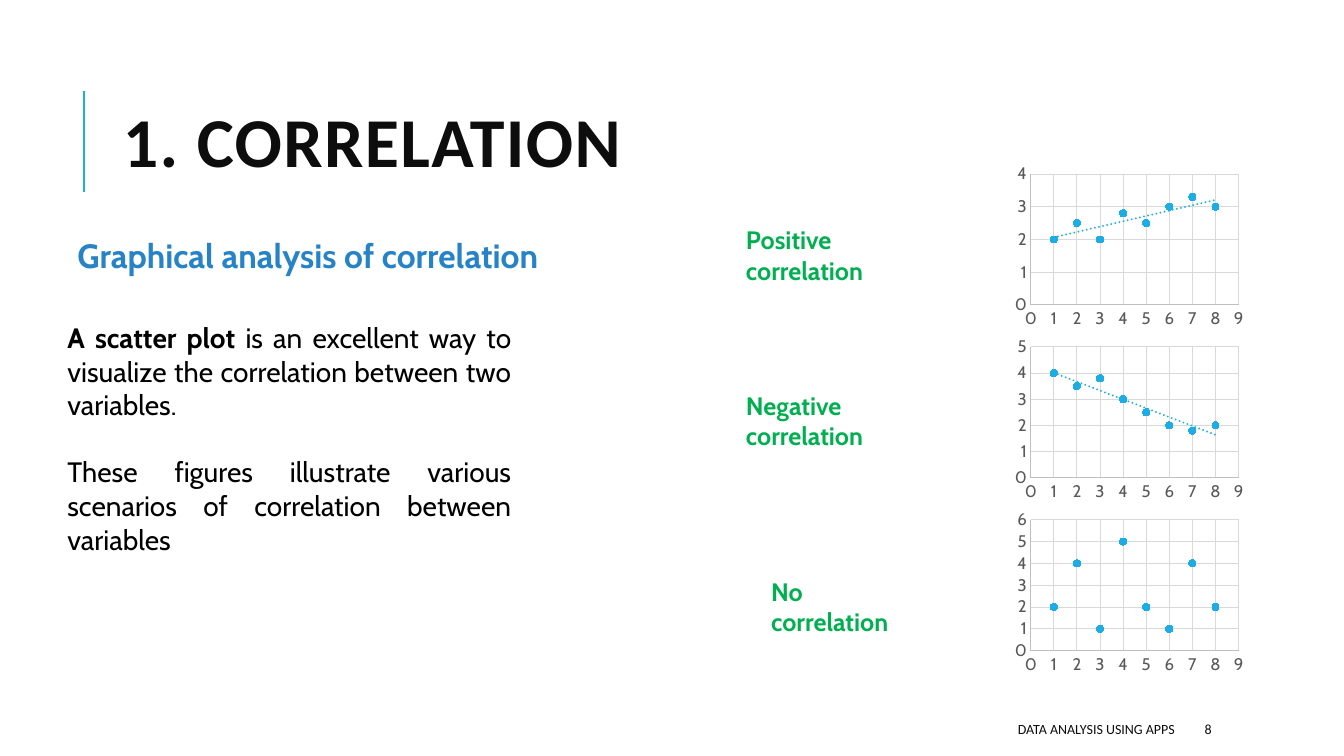
from lxml.etree import SubElement
from pptx import Presentation
from pptx.chart.data import XyChartData
from pptx.dml.color import RGBColor
from pptx.enum.chart import XL_CHART_TYPE as ChartType, XL_MARKER_STYLE as Marker, XL_TICK_MARK as Tick
from pptx.enum.shapes import MSO_CONNECTOR as ConnectorType
from pptx.enum.text import MSO_ANCHOR as Anchor, PP_ALIGN as Align
from pptx.oxml import parse_xml
from pptx.oxml.ns import nsdecls, qn
from pptx.util import Inches, Pt

COLORS = {
    "ink": "0D0D0D",
    "body": "000000",
    "accent": "1CADE4",
    "heading": "2683C6",
    "label": "00B050",
    "tick": "595959",
    "axis": "BFBFBF",
    "grid": "D9D9D9",
}

SCENARIOS = [
    ("Positive correlation", (7.3, 2.18), [2, 2.5, 2, 2.8, 2.5, 3, 3.3, 3], 4, True),
    ("Negative correlation", (7.3, 3.82), [4, 3.5, 3.8, 3, 2.5, 2, 1.8, 2], 5, True),
    ("No correlation", (7.55, 5.67), [2, 4, 1, 5, 2, 1, 4, 2], 6, False),
]
CHART_LEFT, CHART_TOP, CHART_PITCH = 10.01, 1.59, 1.715
CHART_WIDTH, CHART_HEIGHT = 2.37, 1.71


def color(name):
    """Return the palette colour with the given name."""
    return RGBColor.from_string(COLORS[name])


def add_text(slide, box, paragraphs, size, ink, font="Cabin", align=Align.LEFT,
             anchor=Anchor.TOP, wrap=True, gap=0):
    """Add a text box whose paragraphs are lists of (text, bold) runs."""
    frame = slide.shapes.add_textbox(*map(Inches, box)).text_frame
    frame.word_wrap = wrap
    frame.vertical_anchor = anchor
    for index, runs in enumerate(paragraphs):
        paragraph = frame.add_paragraph() if index else frame.paragraphs[0]
        paragraph.alignment = align
        if index:
            paragraph.space_before = Pt(gap)
        for text, bold in runs:
            run = paragraph.add_run()
            run.text = text
            run.font.name = font
            run.font.size = Pt(size)
            run.font.bold = bold
            run.font.color.rgb = color(ink)
    return frame


def add_title(slide, box):
    """Add the title and the vertical rule on its left."""
    left, top, width, height = box
    frame = add_text(slide, box, [[("1. CORRELATION", True)]], 50, "ink",
                     font="Calibri", anchor=Anchor.MIDDLE)
    paragraph = frame.paragraphs[0]
    paragraph.line_spacing = 0.8
    paragraph.runs[0].font._element.set("spc", "100")
    rule_left = Inches(left - 0.29)
    rule = slide.shapes.add_connector(ConnectorType.STRAIGHT, rule_left, Inches(top + 1.26),
                                      rule_left, Inches(top + 0.26))
    rule.line.color.rgb = color("accent")
    rule.line.width = Pt(1.5)
    SubElement(rule.element.spPr, qn("a:effectLst"))


def add_explanation(slide, box):
    """Add the heading and the justified text below it."""
    left, top, width, height = box
    add_text(slide, (left + 0.1, top, 4.91, 0.5),
             [[("Graphical analysis of correlation", True)]], 24, "heading", wrap=False)
    add_text(slide, (left, top + 0.85, width, height - 0.85), [
        [("A scatter plot ", True),
         ("is an excellent way to visualize the correlation between two variables. ", False)],
        [("These figures illustrate various scenarios of correlation between variables", False)],
    ], 20, "body", align=Align.JUSTIFY, gap=24)


def style_axis(axis, maximum):
    """Scale an axis from zero in steps of one and style its lines and labels."""
    axis.minimum_scale, axis.maximum_scale, axis.major_unit = 0, maximum, 1
    axis.major_tick_mark = axis.minor_tick_mark = Tick.NONE
    axis.has_major_gridlines = True
    for line, name in ((axis.format.line, "axis"), (axis.major_gridlines.format.line, "grid")):
        line.color.rgb = color(name)
        line.width = Pt(0.75)
    font = axis.tick_labels.font
    font.name, font.size = "Cabin", Pt(12)
    font.color.rgb = color("tick")


def add_trend(chart):
    """Add a dotted linear trend line to the series of a chart."""
    trend = parse_xml(
        f'<c:trendline {nsdecls("c", "a")}><c:spPr><a:ln w="19050" cap="rnd"><a:solidFill>'
        f'<a:srgbClr val="{COLORS["accent"]}"/></a:solidFill><a:prstDash val="sysDot"/></a:ln>'
        '</c:spPr><c:trendlineType val="linear"/><c:dispRSqr val="0"/><c:dispEq val="0"/>'
        '</c:trendline>')
    next(chart.element.iter(qn("c:xVal"))).addprevious(trend)


def fix_plot_area(chart):
    """Place the inner plot area at a fixed part of the chart."""
    plot_area = next(chart.element.iter(qn("c:plotArea")))
    for layout in plot_area.findall(qn("c:layout")):
        plot_area.remove(layout)
    places = "".join(f'<c:{key} val="{value}"/>' for key, value in
                     (("x", 0.09), ("y", 0.08), ("w", 0.87), ("h", 0.76)))
    plot_area.insert(0, parse_xml(
        f'<c:layout {nsdecls("c")}><c:manualLayout><c:layoutTarget val="inner"/>'
        f'<c:xMode val="edge"/><c:yMode val="edge"/>{places}</c:manualLayout></c:layout>'))


def add_scatter(slide, box, values, maximum, has_trend):
    """Add a scatter chart of the values against 1, 2, 3 and so on."""
    data = XyChartData()
    points = data.add_series("Series 1")
    for x, y in enumerate(values, 1):
        points.add_data_point(x, y)
    chart = slide.shapes.add_chart(ChartType.XY_SCATTER, *map(Inches, box), data).chart
    chart.has_title = chart.has_legend = False
    chart.font.name, chart.font.size = "Cabin", Pt(10)
    chart.font.color.rgb = color("body")
    chart.plots[0].vary_by_categories = False
    style_axis(chart.category_axis, 9)
    style_axis(chart.value_axis, maximum)
    series = chart.plots[0].series[0]
    series.format.line.fill.background()
    series.marker.style, series.marker.size = Marker.CIRCLE, 5
    series.marker.format.fill.solid()
    series.marker.format.fill.fore_color.rgb = color("accent")
    series.marker.format.line.color.rgb = color("accent")
    if has_trend:
        add_trend(chart)
    fix_plot_area(chart)


def add_scenarios(slide):
    """Add the column of scatter charts with their labels."""
    for row, (label, (left, top), values, maximum, has_trend) in enumerate(SCENARIOS):
        box = (CHART_LEFT, CHART_TOP + row * CHART_PITCH, CHART_WIDTH, CHART_HEIGHT)
        add_scatter(slide, box, values, maximum, has_trend)
        add_text(slide, (left, top, 1.45, 0.7), [[(label, True)]], 18, "label")


def add_footer(slide, box):
    """Add the footer text and the slide number."""
    left, top, width, height = box
    style = dict(size=10, ink="ink", font="Calibri", anchor=Anchor.MIDDLE)
    add_text(slide, (left, top, 6.45, height), [[("DATA ANALYSIS USING APPS", False)]],
             align=Align.RIGHT, **style)
    add_text(slide, (left + 6.55, top, width - 6.55, height), [[("8", False)]], **style)


def main():
    """Build the slide and save the presentation."""
    presentation = Presentation()
    presentation.slide_width, presentation.slide_height = Inches(13.33), Inches(7.5)
    slide = presentation.slides.add_slide(presentation.slide_layouts[6])
    add_title(slide, (1.12, 0.64, 10.63, 1.64))
    add_explanation(slide, (0.57, 2.28, 4.6, 2.97))
    add_scenarios(slide)
    add_footer(slide, (5.3, 7.08, 7.61, 0.3))
    presentation.save("out.pptx")


if __name__ == "__main__":
    main()
